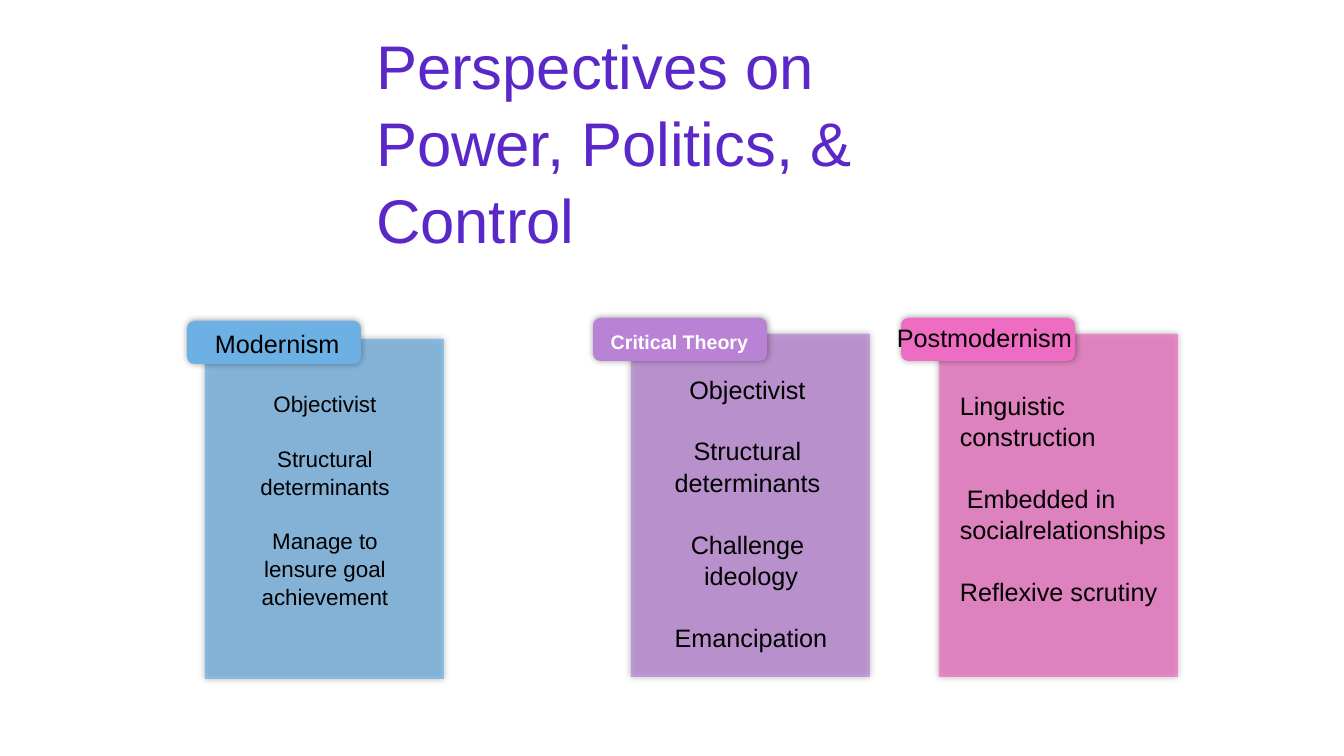
import pptx
import pptx.util
import pptx.dml.color
import pptx.enum.shapes
import pptx.enum.text
import pptx.oxml
import pptx.oxml.ns

HUES = {
    "title": "5A28C8",
    "blue": "6DB0E4",
    "purple": "B982D5",
    "pink": "EE6CC1",
    "black": "000000",
    "white": "FFFFFF",
}
SCALE = 914400 / 100.8
SHADOW = (
    f"<a:effectLst {pptx.oxml.ns.nsdecls('a')}>"
    '<a:outerShdw blurRad="63500" dist="0" dir="0" rotWithShape="0">'
    '<a:srgbClr val="000000"><a:alpha val="40000"/></a:srgbClr>'
    "</a:outerShdw></a:effectLst>"
)
KINDS = pptx.enum.shapes.MSO_SHAPE
ALIGN = pptx.enum.text.PP_ALIGN
ANCHOR = pptx.enum.text.MSO_ANCHOR


def px(count):
    return pptx.util.Emu(round(count * SCALE))


def tint(name):
    return pptx.dml.color.RGBColor.from_string(HUES[name])


class Board:
    font = "Arial"
    lead = 1.04

    def __init__(self, deck):
        self.slide = deck.slides.add_slide(deck.slide_layouts[6])

    def block(self, kind, box, hue, alpha=100):
        shape = self.slide.shapes.add_shape(kind, *map(px, box))
        shape.fill.solid()
        shape.fill.fore_color.rgb = tint(hue)
        shape.line.fill.background()
        shape.shadow.inherit = False
        props = shape.element.spPr
        if alpha < 100:
            color = props.find(".//" + pptx.oxml.ns.qn("a:srgbClr"))
            color.append(pptx.oxml.parse_xml(
                f"<a:alpha {pptx.oxml.ns.nsdecls('a')} val=\"{alpha * 1000}\"/>"))
        plain = props.find(pptx.oxml.ns.qn("a:effectLst"))
        props.replace(plain, pptx.oxml.parse_xml(SHADOW))
        return shape

    def panel(self, box, hue):
        self.block(KINDS.RECTANGLE, box, hue, 70)

    def tab(self, left, top, hue):
        shape = self.block(KINDS.ROUNDED_RECTANGLE, (left, top, 174, 43), hue)
        shape.adjustments[0] = 0.17

    def text(self, box, groups, size, hue="black", align=ALIGN.LEFT,
             bold=False, wrap=True):
        frame = self.slide.shapes.add_textbox(*map(px, box)).text_frame
        frame.word_wrap = wrap
        frame.auto_size = pptx.enum.text.MSO_AUTO_SIZE.SHAPE_TO_FIT_TEXT
        frame.text = "\n".join(line for group in groups for line in group)
        heads = {id(group): sum(map(len, groups[:spot]))
                 for spot, group in enumerate(groups) if spot}
        for spot, para in enumerate(frame.paragraphs):
            para.alignment = align
            para.line_spacing = self.lead
            if spot in heads.values():
                para.space_before = pptx.util.Pt(round(size * 1.2, 1))
            for run in para.runs:
                run.font.name = self.font
                run.font.size = pptx.util.Pt(size)
                run.font.bold = bold
                run.font.color.rgb = tint(hue)
        return frame

    def title(self, box, words):
        frame = self.text(box, [[words]], 44, "title")
        frame.vertical_anchor = ANCHOR.MIDDLE
        frame.margin_left = frame.margin_right = px(4)
        frame.margin_top = frame.margin_bottom = 0


def main():
    deck = pptx.Presentation()
    deck.slide_width, deck.slide_height = px(1344), px(756)
    board = Board(deck)

    for hue, panel, tab in (
        ("pink", (939, 334, 239, 343), (901, 318)),
        ("purple", (631, 334, 239, 343), (593, 318)),
        ("blue", (205, 339, 239, 340), (187, 321)),
    ):
        board.panel(panel, hue)
        board.tab(*tab, hue)

    board.title((372, 66, 635, 149), "Perspectives on Power, Politics, & Control")
    board.text((599, 324, 161, 34), [["Critical Theory"]], 14, "white",
               ALIGN.CENTER, bold=True)
    board.text((887, 316, 222, 40), [["Postmodernism"]], 18)
    board.text((205, 322, 146, 40), [["Modernism"]], 18, wrap=False)

    board.text((228, 384, 194, 228), [
        ["Objectivist"],
        ["Structural", "determinants"],
        ["Manage to", "lensure goal", "achievement"],
    ], 16, align=ALIGN.CENTER)
    board.text((631, 368, 233, 285), [
        ["Objectivist"],
        ["Structural determinants"],
        ["Challenge", " ideology"],
        [" Emancipation"],
    ], 18, align=ALIGN.CENTER)
    board.text((950, 384, 229, 224), [
        ["Linguistic construction"],
        [" Embedded in socialrelationships"],
        ["Reflexive scrutiny"],
    ], 18)

    deck.save("out.pptx")


if __name__ == "__main__":
    main()
